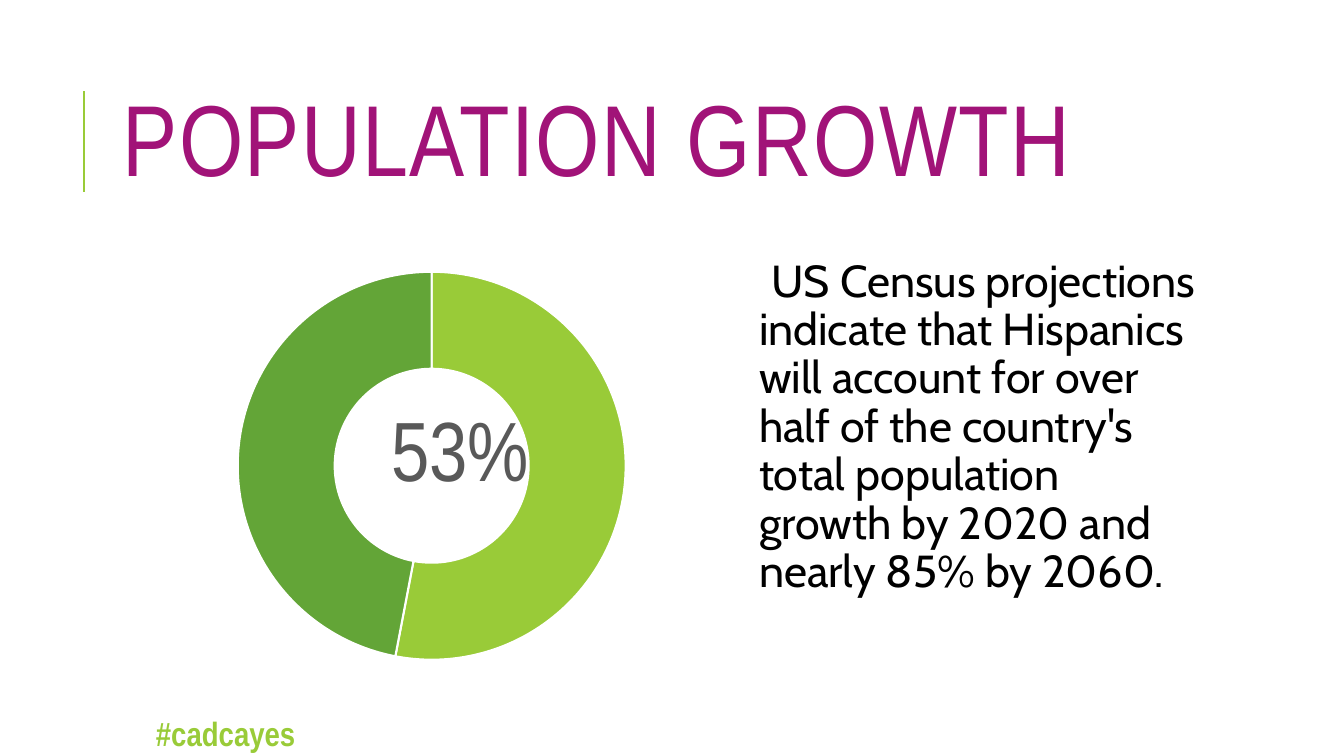
from lxml import etree
from pptx import Presentation
from pptx.chart.data import CategoryChartData
from pptx.dml.color import RGBColor as RGB
from pptx.enum.chart import XL_CHART_TYPE as CT
from pptx.enum.shapes import MSO_CONNECTOR as CONN
from pptx.enum.text import MSO_ANCHOR as ANCHOR
from pptx.oxml.ns import qn
from pptx.util import Cm, Pt

THEME = {
    "lime": RGB.from_string("99CB38"),
    "green": RGB.from_string("63A537"),
    "magenta": RGB.from_string("A11378"),
    "grey": RGB.from_string("595959"),
    "black": RGB.from_string("000000"),
    "white": RGB.from_string("FFFFFF"),
    "narrow": "Arial Narrow",
    "body": "Cabin",
    "title_size": Pt(72),
    "share_size": Pt(60),
    "body_size": Pt(32),
    "tag_size": Pt(24),
    "chart_size": Pt(10),
}


def add_run(p, text, face, size, color, bold=False):
    r = p.add_run()
    r.text = text
    r.font.name = THEME[face]
    r.font.size = THEME[size]
    r.font.color.rgb = THEME[color]
    r.font.bold = bold
    return r


def set_layout(parent, index, **fractions):
    for old in parent.findall(qn("c:layout")):
        parent.remove(old)
    layout = etree.Element(qn("c:layout"))
    manual = etree.SubElement(layout, qn("c:manualLayout"))
    if "w" in fractions:
        etree.SubElement(manual, qn("c:layoutTarget")).set("val", "inner")
    for mode in ("xMode", "yMode"):
        etree.SubElement(manual, qn(f"c:{mode}")).set("val", "edge")
    for key, value in fractions.items():
        etree.SubElement(manual, qn(f"c:{key}")).set("val", str(value))
    parent.insert(index, layout)


prs = Presentation()
prs.slide_width, prs.slide_height = Cm(33.87), Cm(19.05)
s = prs.slides.add_slide(prs.slide_layouts[6])
s.background.fill.solid()
s.background.fill.fore_color.rgb = THEME["white"]

rule = s.shapes.add_connector(CONN.STRAIGHT, Cm(2.12), Cm(4.83), Cm(2.12), Cm(2.29))
rule.line.color.rgb = THEME["lime"]
rule.line.width = Pt(1.5)
etree.SubElement(rule.element.spPr, qn("a:effectLst"))

tf = s.shapes.add_textbox(Cm(2.84), Cm(1.63), Cm(27), Cm(4.17)).text_frame
tf.word_wrap = True
tf.vertical_anchor = ANCHOR.MIDDLE
p = tf.paragraphs[0]
p.line_spacing = 0.8
r = add_run(p, "POPULATION GROWTH", "narrow", "title_size", "magenta")
r.font.element.set("spc", "100") if hasattr(r.font, "element") else r._r.get_or_add_rPr().set("spc", "100")

tf = s.shapes.add_textbox(Cm(18.75), Cm(6.38), Cm(11.53), Cm(9.09)).text_frame
tf.word_wrap = True
tf.margin_left = tf.margin_top = tf.margin_right = tf.margin_bottom = Cm(0.13)
p = tf.paragraphs[0]
p.line_spacing = 0.9
p.space_after = Pt(2)
pPr = p._p.get_or_add_pPr()
pPr.set("marL", str(Cm(0.25)))
pPr.set("indent", str(-Cm(0.25)))
bullet_color = etree.SubElement(pPr, qn("a:buClr"))
etree.SubElement(bullet_color, qn("a:srgbClr")).set("val", str(THEME["lime"]))
etree.SubElement(pPr, qn("a:buChar")).set("char", " ")
add_run(
    p,
    "US Census projections indicate that Hispanics will account for over half of "
    "the country's total population growth by 2020 and nearly 85% by 2060.",
    "body", "body_size", "black",
)

data = CategoryChartData()
data.categories = ["1", "2", "3"]
data.add_series("Series 1", [53, 47, None])
chart = s.shapes.add_chart(
    CT.DOUGHNUT, Cm(2.08), Cm(2.74), Cm(17.6), Cm(14.17), data
).chart
chart.has_legend = False
chart.font.name = THEME["body"]
chart.font.size = THEME["chart_size"]
chart.font.color.rgb = THEME["black"]
plot = chart.plots[0]
plot.vary_by_categories = True
plot.has_data_labels = False
for i, color in enumerate(("lime", "green")):
    fmt = plot.series[0].points[i].format
    fmt.fill.solid()
    fmt.fill.fore_color.rgb = THEME[color]
    fmt.line.color.rgb = THEME["white"]
    fmt.line.width = Pt(1.5)

chart.has_title = True
p = chart.chart_title.text_frame.paragraphs[0]
add_run(p, "53%", "narrow", "share_size", "grey")
chart_xml = chart.element.find(qn("c:chart"))
set_layout(chart_xml.find(qn("c:title")), 1, x=0.42, y=0.51)
set_layout(chart_xml.find(qn("c:plotArea")), 0, x=0.22, y=0.29, w=0.56, h=0.69)
next(chart.element.iter(qn("c:holeSize"))).set("val", "75")

tf = s.shapes.add_textbox(Cm(3.68), Cm(17.83), Cm(5), Cm(1.27)).text_frame
tf.word_wrap = True
add_run(tf.paragraphs[0], "#cadcayes", "narrow", "tag_size", "lime", True)

prs.save("out.pptx")
